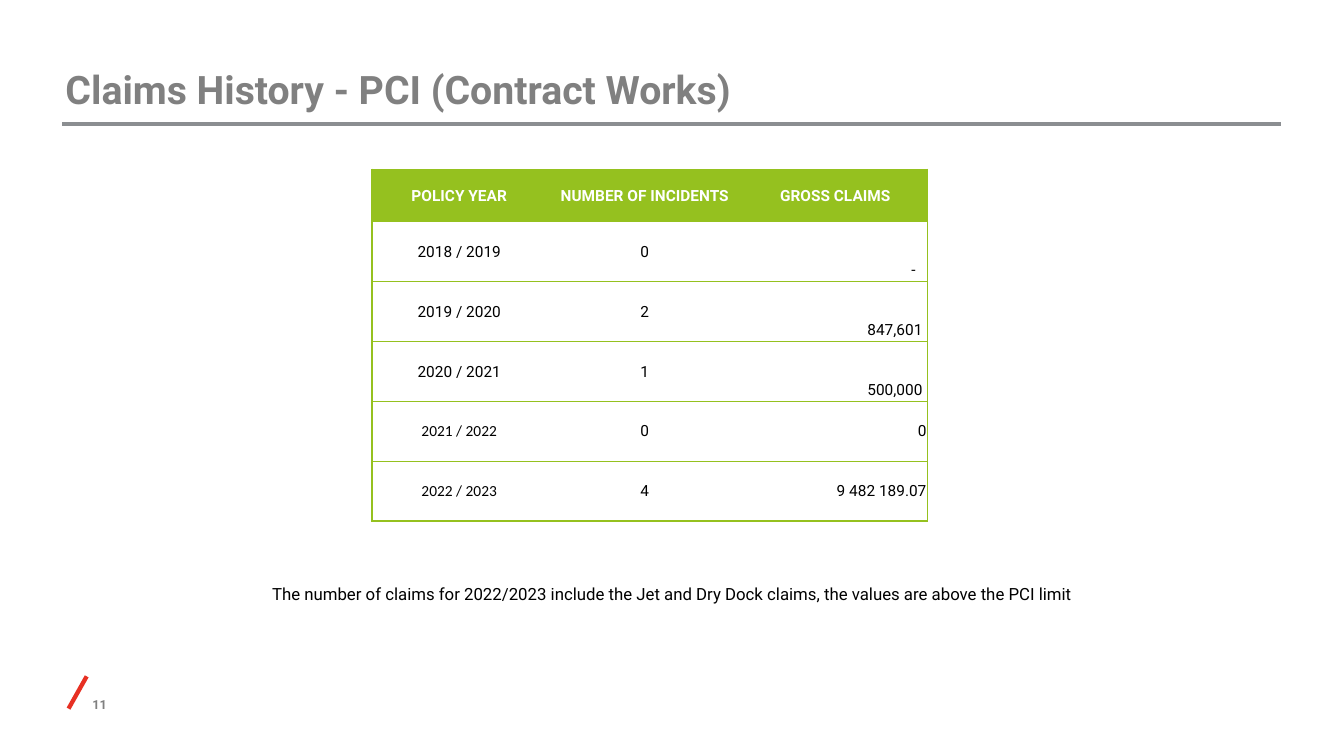
"""Build the claims history slide with its table of policy years."""
import lxml.etree
import pptx
import pptx.dml.color
import pptx.enum.shapes
import pptx.enum.text
import pptx.oxml
import pptx.oxml.ns
import pptx.util

Inches = pptx.util.Inches
Pt = pptx.util.Pt
ALIGN = pptx.enum.text.PP_ALIGN
ANCHOR = pptx.enum.text.MSO_ANCHOR
COLORS = {"title": "808080", "rule": "8B8E91", "slash": "E73023",
          "green": "95C11F", "white": "FFFFFF", "black": "000000"}


def write(text_frame, text, size, color, bold=False, align=ALIGN.LEFT, font="Roboto"):
    text_frame.text = text
    paragraph = text_frame.paragraphs[0]
    paragraph.alignment = align
    run_font = paragraph.runs[0].font
    run_font.name = font
    run_font.size = Pt(size)
    run_font.bold = bold
    run_font.color.rgb = pptx.dml.color.RGBColor.from_string(COLORS[color])


def set_borders(cell, visible_sides):
    properties = cell._tc.get_or_add_tcPr()
    for index, side in enumerate("LRTB"):
        fill = "<a:noFill/>"
        if side in visible_sides:
            fill = f'<a:solidFill><a:srgbClr val="{COLORS["green"]}"/></a:solidFill>'
        namespace = pptx.oxml.ns.nsdecls("a")
        border = f'<a:ln{side} {namespace} w="{Pt(1)}">{fill}</a:ln{side}>'
        properties.insert(index, pptx.oxml.parse_xml(border))


presentation = pptx.Presentation()
presentation.slide_width = Inches(13.33)
presentation.slide_height = Inches(7.5)
slide = presentation.slides.add_slide(presentation.slide_layouts[6])

lines = [
    ((0.62, 1.23, 12.71, 1.23), "rule", 2.5),
    ((0.68, 7.03, 0.86, 6.71), "slash", 3.05),
]
for ends, color, width in lines:
    connector = slide.shapes.add_connector(
        pptx.enum.shapes.MSO_CONNECTOR.STRAIGHT, *[Inches(end) for end in ends])
    connector.line.color.rgb = pptx.dml.color.RGBColor.from_string(COLORS[color])
    connector.line.width = Pt(width)
    lxml.etree.SubElement(connector._element.spPr, pptx.oxml.ns.qn("a:effectLst"))

labels = [
    ("11", (0.49, 6.88, 0.57, 0.23), 9, ALIGN.RIGHT, 0.05),
    ("Claims History - PCI (Contract Works)", (0.65, 0.39, 10, 0.72), 28, ALIGN.LEFT, 0),
]
for text, box, size, align, bottom in labels:
    label = slide.shapes.add_textbox(*[Inches(length) for length in box])
    frame = label.text_frame
    frame.word_wrap = True
    frame.vertical_anchor = ANCHOR.BOTTOM
    frame.margin_left = frame.margin_top = frame.margin_right = 0
    frame.margin_bottom = Inches(bottom)
    write(frame, text, size, "title", True, align)

rows = [
    ("POLICY YEAR", "NUMBER OF INCIDENTS", "GROSS CLAIMS"),
    ("2018 / 2019", "0", "-"),
    ("2019 / 2020", "2", "847,601"),
    ("2020 / 2021", "1", "500,000"),
    ("2021 / 2022", "0", "0"),
    ("2022 / 2023", "4", "9 482 189.07"),
]
low_amount_margins = {1: 0.12, 2: 0.05, 3: 0.05}
calibri_rows = (4, 5)
header_height, table_height = 0.52, 3.49

table = slide.shapes.add_table(
    len(rows), 3, Inches(3.69), Inches(1.68), Inches(5.51), Inches(table_height)).table
table.first_row = True
table.horz_banding = False
for column, width in zip(table.columns, (1.73, 1.95, 1.83)):
    column.width = Inches(width)
for row_index, values in enumerate(rows):
    header = row_index == 0
    body_height = (table_height - header_height) / (len(rows) - 1)
    table.rows[row_index].height = Inches(header_height if header else body_height)
    for column_index, value in enumerate(values):
        cell = table.cell(row_index, column_index)
        amount = column_index == 2 and not header
        cell.margin_left = cell.margin_right = cell.margin_top = Inches(0.01)
        cell.margin_bottom = 0
        cell.vertical_anchor = ANCHOR.MIDDLE
        if amount and row_index in low_amount_margins:
            cell.vertical_anchor = ANCHOR.BOTTOM
            cell.margin_bottom = Inches(0.02)
            cell.margin_right = Inches(low_amount_margins[row_index])
        font = "Calibri" if column_index == 0 and row_index in calibri_rows else "Roboto"
        write(cell.text_frame, value, 11, "white" if header else "black", header,
              ALIGN.RIGHT if amount else ALIGN.CENTER, font)
        cell.fill.solid()
        cell.fill.fore_color.rgb = pptx.dml.color.RGBColor.from_string(
            COLORS["green" if header else "white"])
        set_borders(cell, ("LTB", "TB", "RTB")[column_index])

note = slide.shapes.add_textbox(Inches(2.6), Inches(5.74), Inches(8.31), Inches(0.3))
note.text_frame.word_wrap = False
note.text_frame.auto_size = pptx.enum.text.MSO_AUTO_SIZE.SHAPE_TO_FIT_TEXT
write(note.text_frame,
      "The number of claims for 2022/2023 include the Jet and Dry Dock claims, "
      "the values are above the PCI limit", 12, "black")

presentation.save("out.pptx")
